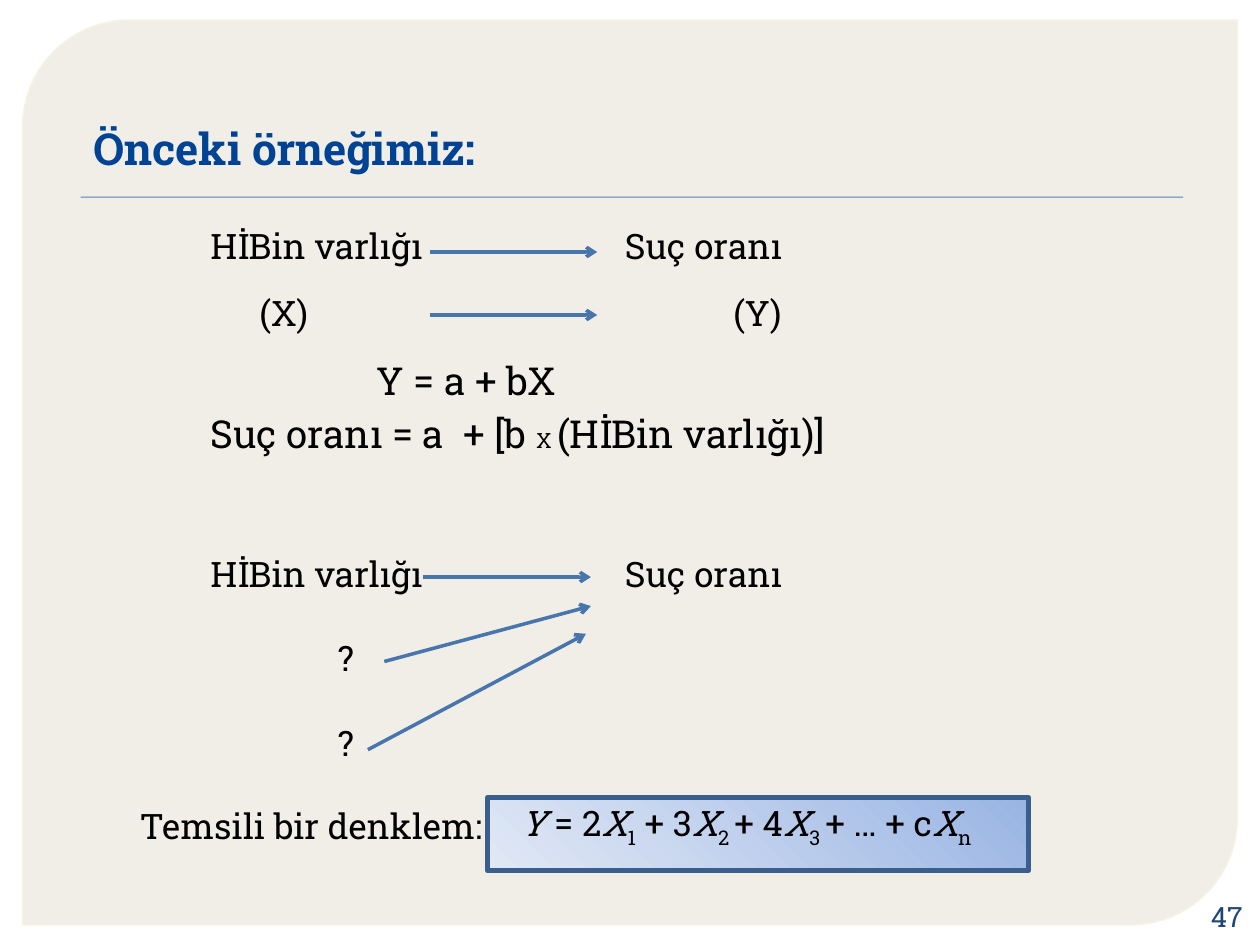
from typing import NamedTuple

from lxml import etree
from pptx import Presentation
from pptx.dml.color import RGBColor
from pptx.enum.shapes import MSO_CONNECTOR, MSO_SHAPE
from pptx.enum.text import MSO_ANCHOR, PP_ALIGN
from pptx.oxml.ns import qn
from pptx.util import Inches, Pt

MIDDLE = MSO_ANCHOR.MIDDLE
LEFT, RIGHT = PP_ALIGN.LEFT, PP_ALIGN.RIGHT
STRAIGHT = MSO_CONNECTOR.STRAIGHT
RECT, PANEL = MSO_SHAPE.RECTANGLE, MSO_SHAPE.ROUND_2_DIAG_RECTANGLE
FONT = "Roboto Slab"
ROW = 0.4


class Bit(NamedTuple):
    text: str
    italic: bool = False
    sub: bool = False
    size: float | None = None


class Label(NamedTuple):
    left: float
    mid: float
    width: float
    bits: list[Bit]
    size: float = 20
    color: str = "000000"
    align: PP_ALIGN = LEFT


class Arrow(NamedTuple):
    x1: float
    y1: float
    x2: float
    y2: float


def term(factor: str, index: str) -> list[Bit]:
    """A factor, then an italic X with its index below the line."""
    return [Bit(factor), Bit("X", italic=True), Bit(index, sub=True)]


CAUSE, CRIME = [Bit("HİBin varlığı")], [Bit("Suç oranı")]
MODEL = [Bit("Suç oranı = a  + [b "), Bit("X ", size=12),
         Bit("(HİBin varlığı)]")]
SUM = [Bit("Y ", italic=True), *term("= 2", "1"), *term(" + 3", "2 "),
       *term("+ 4", "3 "), *term("+ … + c", "n")]

LABELS = [
    Label(1.67, 1.95, 1.9, CAUSE),
    Label(4.96, 1.95, 1.5, CRIME),
    Label(2.06, 2.48, 0.6, [Bit("(X)")]),
    Label(5.82, 2.48, 0.6, [Bit("(Y)")]),
    Label(2.99, 3.02, 1.8, [Bit("Y = a + bX")], 22),
    Label(1.67, 3.44, 5.4, MODEL, 22),
    Label(1.67, 4.55, 1.9, CAUSE),
    Label(4.96, 4.55, 1.5, CRIME),
    Label(2.68, 5.22, 0.3, [Bit("?")]),
    Label(2.68, 5.89, 0.3, [Bit("?")]),
    Label(1.11, 6.55, 2.8, [Bit("Temsili bir denklem:")]),
    Label(4.13, 6.55, 3.9, SUM),
    Label(9.35, 7.27, 0.51, [Bit("47")], 16, "1E4677", RIGHT),
]
ARROWS = [
    Arrow(3.41, 2, 4.74, 2),
    Arrow(3.41, 2.5, 4.74, 2.5),
    Arrow(3.36, 4.58, 4.69, 4.58),
    Arrow(3.05, 5.25, 4.69, 4.81),
    Arrow(2.92, 5.95, 4.65, 5.03),
]


def rgb(code: str) -> RGBColor:
    return RGBColor.from_string(code)


def apply(target, **values) -> None:
    for name, value in values.items():
        setattr(target, name, value)


def style(font, size: float, color: str, **values) -> None:
    apply(font, name=FONT, size=Pt(size), **values)
    font.color.rgb = rgb(color)


def set_frame(frame, wrap: bool) -> None:
    apply(frame, word_wrap=wrap, vertical_anchor=MIDDLE, margin_left=0,
          margin_right=0, margin_top=0, margin_bottom=0)


def fade(shape, percent: int) -> None:
    """Make a solid fill partly transparent."""
    tint = shape._element.spPr.find(qn("a:solidFill")).find(qn("a:srgbClr"))
    etree.SubElement(tint, qn("a:alpha"), val=str(percent * 1000))


def add_box(slide, kind: MSO_SHAPE, box: tuple, color: str):
    shape = slide.shapes.add_shape(kind, *map(Inches, box))
    shape.shadow.inherit = False
    shape.fill.solid()
    shape.fill.fore_color.rgb = rgb(color)
    shape.line.fill.background()
    return shape


def add_edge(shape, color: str, width: float) -> None:
    shape.line.color.rgb = rgb(color)
    shape.line.width = Pt(width)


def add_label(slide, label: Label) -> None:
    box = slide.shapes.add_textbox(Inches(label.left),
                                   Inches(label.mid - ROW / 2),
                                   Inches(label.width), Inches(ROW))
    set_frame(box.text_frame, True)
    para = box.text_frame.paragraphs[0]
    para.alignment = label.align
    for bit in label.bits:
        run = para.add_run()
        run.text = bit.text
        style(run.font, bit.size or label.size, label.color,
              italic=bit.italic)
        if bit.sub:
            run._r.get_or_add_rPr().set("baseline", "-25000")


def add_arrow(slide, arrow: Arrow) -> None:
    line = slide.shapes.add_connector(STRAIGHT, *map(Inches, arrow))
    add_edge(line, "4875AC", 2)
    etree.SubElement(line.line._get_or_add_ln(), qn("a:tailEnd"),
                     type="arrow")
    etree.SubElement(line._element.spPr, qn("a:effectLst"))


def add_title(slide, text: str) -> None:
    title = slide.shapes.title
    apply(title, left=Inches(0.74), top=Inches(0.92),
          width=Inches(8.84), height=Inches(0.5))
    title.text = text
    set_frame(title.text_frame, True)
    para = title.text_frame.paragraphs[0]
    para.alignment = LEFT
    style(para.runs[0].font, 25.2, "004395", bold=True)


def main() -> None:
    deck = Presentation()
    apply(deck, slide_width=Inches(10), slide_height=Inches(7.5))
    slide = deck.slides.add_slide(deck.slide_layouts[5])

    panel = add_box(slide, PANEL, (0.18, 0.16, 9.64, 7.18), "E8E6D9")
    panel.adjustments[0] = 0.118
    fade(panel, 65)
    add_edge(panel, "F6F3E4", 0.87)
    add_box(slide, RECT, (0.64, 1.56, 8.75, 0.01), "4F81BD")

    frame = add_box(slide, RECT, (3.87, 6.33, 4.29, 0.58), "C2D1ED")
    frame.fill.gradient()
    frame.fill.gradient_angle = 225
    for stop, color in zip(frame.fill.gradient_stops, ("9AB5E4", "E1E8F5")):
        stop.color.rgb = rgb(color)
    add_edge(frame, "3A5F8C", 3)

    # The title comes after the panel so that it stays in front.
    slide.shapes._spTree.append(slide.shapes.title._element)
    add_title(slide, "Önceki örneğimiz:")
    for label in LABELS:
        add_label(slide, label)
    for arrow in ARROWS:
        add_arrow(slide, arrow)
    deck.save("out.pptx")


if __name__ == "__main__":
    main()
